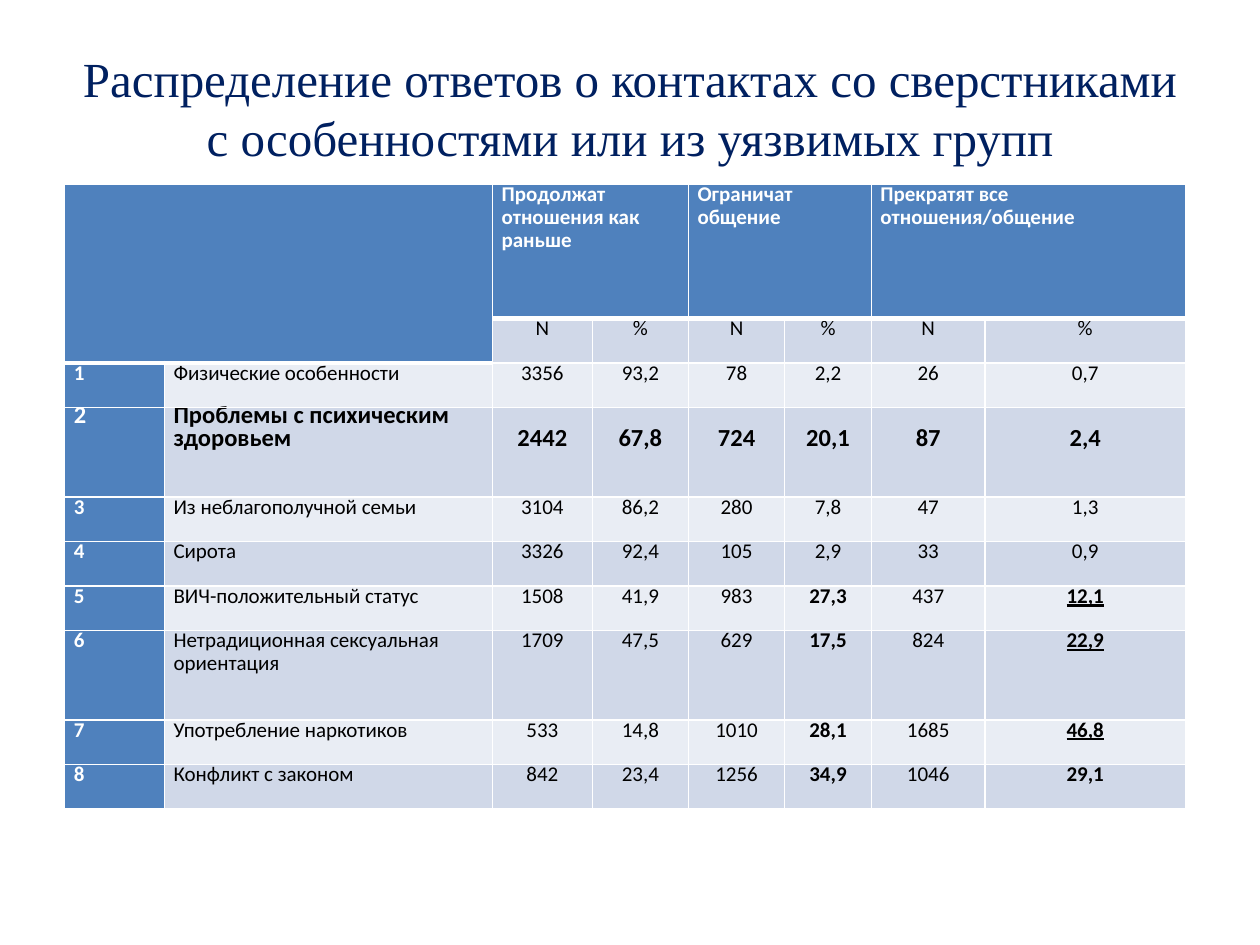
"""Build a slide with a table of survey answers about contacts with peers."""
import pptx
import pptx.util
import pptx.dml.color
import pptx.enum.text
import pptx.oxml
import pptx.oxml.ns

Pt = pptx.util.Pt
ALIGN = pptx.enum.text.PP_ALIGN
BLUE, BAND, LIGHT, WHITE, BLACK = "4F81BD", "D0D8E8", "E9EDF4", "FFFFFF", "000000"


def color(value):
    return pptx.dml.color.RGBColor.from_string(value)


def write(tf, text, size=12, font="Calibri", fg=BLACK, bold=False, underline=False,
          align=ALIGN.LEFT, spacing=None):
    p = tf.paragraphs[0]
    p.alignment = align
    if spacing:
        p.line_spacing = Pt(spacing)
    r = p.add_run()
    r.text = text
    r.font.size, r.font.name = Pt(size), font
    r.font.bold, r.font.underline = bold, underline
    r.font.color.rgb = color(fg)


prs = pptx.Presentation()
prs.slide_width, prs.slide_height = Pt(720), Pt(540)
s = prs.slides.add_slide(prs.slide_layouts[6])

sp = s.shapes.add_textbox(Pt(36), Pt(21.6), Pt(648), Pt(90))
tf = sp.text_frame
tf.word_wrap = True
tf.vertical_anchor = pptx.enum.text.MSO_ANCHOR.MIDDLE
tf.margin_bottom = Pt(13.6)
write(tf, "Распределение ответов о контактах со сверстниками с особенностями или из уязвимых групп",
      size=28, font="Times New Roman", fg="002060", align=ALIGN.CENTER)

rows = [
    ["", "", "Продолжат отношения как раньше", "", "Ограничат общение", "",
     "Прекратят все отношения/общение", ""],
    ["", "", "N", "%", "N", "%", "N", "%"],
    ["1", "Физические особенности", "3356", "93,2", "78", "2,2", "26", "0,7"],
    ["2", "Проблемы с психическим здоровьем", "2442", "67,8", "724", "20,1", "87", "2,4"],
    ["3", "Из неблагополучной семьи", "3104", "86,2", "280", "7,8", "47", "1,3"],
    ["4", "Сирота", "3326", "92,4", "105", "2,9", "33", "0,9"],
    ["5", "ВИЧ-положительный статус", "1508", "41,9", "983", "27,3", "437", "12,1"],
    ["6", "Нетрадиционная сексуальная ориентация", "1709", "47,5", "629", "17,5", "824", "22,9"],
    ["7", "Употребление наркотиков", "533", "14,8", "1010", "28,1", "1685", "46,8"],
    ["8", "Конфликт с законом", "842", "23,4", "1256", "34,9", "1046", "29,1"],
]
widths = [57, 187.5, 57, 55, 55, 49.5, 65, 114.5]
heights = [76.5] + [25.5] * 9
heights[3] = heights[7] = 51

table = s.shapes.add_table(len(rows), len(widths), Pt(37), Pt(105.5),
                           Pt(sum(widths)), Pt(sum(heights))).table
table.first_row = table.horz_banding = False
for column, width in zip(table.columns, widths):
    column.width = Pt(width)
for row, height in zip(table.rows, heights):
    row.height = Pt(height)

table.cell(0, 0).merge(table.cell(1, 1))
for j in (2, 4, 6):
    table.cell(0, j).merge(table.cell(0, j + 1))

for i, row in enumerate(rows):
    for j, text in enumerate(row):
        cell = table.cell(i, j)
        header = i == 0 or j == 0 or (i == 1 and j == 1)
        strong = i == 3
        number = i > 0 and j > 1
        cell.margin_left = cell.margin_right = Pt(5.2)
        cell.margin_top = Pt(13 if strong and number else 0)
        cell.margin_bottom = 0
        cell.fill.solid()
        cell.fill.fore_color.rgb = color(BLUE if header else BAND if i % 2 else LIGHT)
        if text:
            write(cell.text_frame, text, size=14 if strong else 12, spacing=13,
                  fg=WHITE if header else BLACK,
                  bold=header or strong or (i > 5 and j in (5, 7)),
                  underline=j == 7 and 6 <= i <= 8,
                  align=ALIGN.CENTER if number else ALIGN.LEFT)
        header_end = 1 if j < 2 else 0
        top = 3 if i == header_end + 1 else 1
        bottom = 3 if i == header_end else 1
        tcPr = cell._tc.get_or_add_tcPr()
        for k, (side, width) in enumerate(zip("LRTB", (1, 1, top, bottom))):
            tcPr.insert(k, pptx.oxml.parse_xml(
                f'<a:ln{side} {pptx.oxml.ns.nsdecls("a")} w="{Pt(width)}"><a:solidFill>'
                f'<a:srgbClr val="{WHITE}"/></a:solidFill></a:ln{side}>'))

prs.save("out.pptx")
